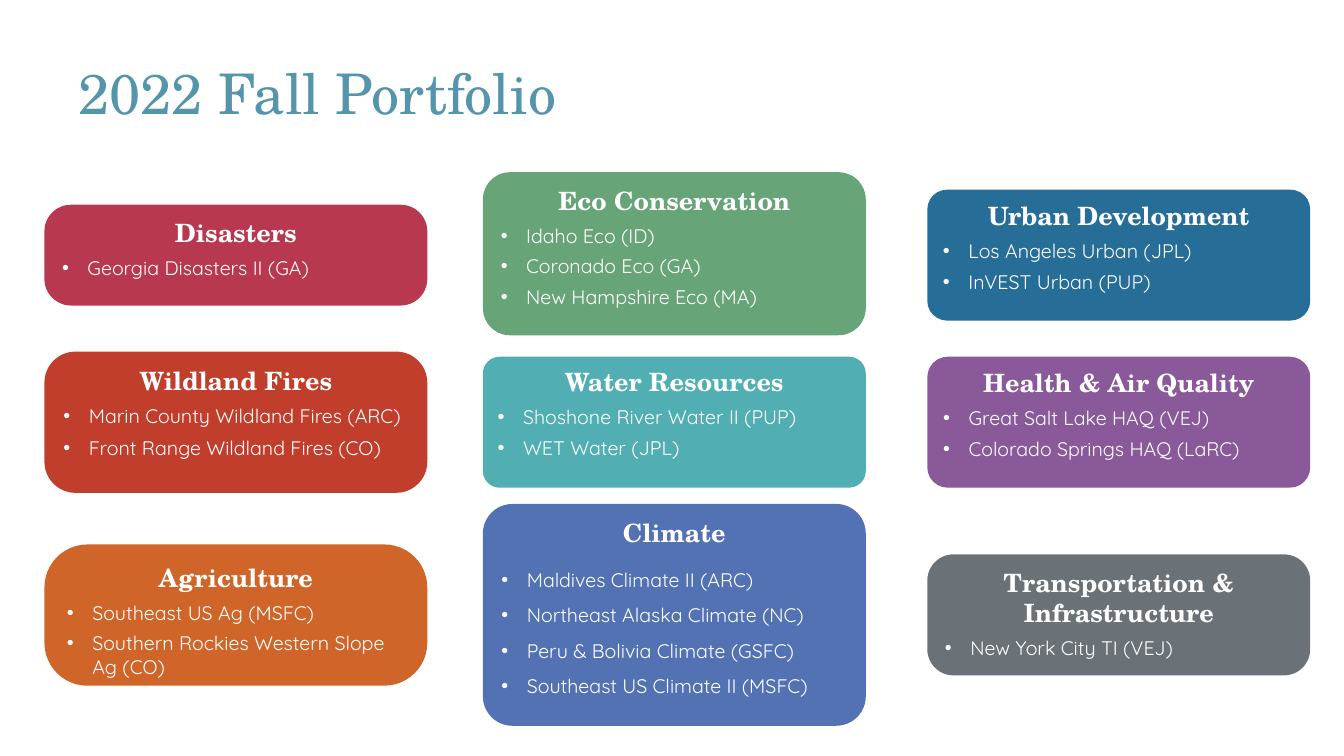
from lxml import etree
from pptx import Presentation
from pptx import util as u
from pptx.dml import color
from pptx.enum import shapes, text
from pptx.oxml import ns

HEADING_FONT = "TeX Gyre Schola"
PROJECT_FONT = "Quicksand"
WHITE = "FFFFFF"
CARD_WIDTH = 9.65
COLUMNS = [
    (1.12, [
        ("Disasters", "B8394F", 5.16, 2.54, 0.264, 5, 1,
         ["Georgia Disasters II (GA)"]),
        ("Wildland Fires", "C13D2C", 8.86, 3.56, 0.22, 6, 1,
         ["Marin County Wildland Fires (ARC)", "Front Range Wildland Fires (CO)"]),
        ("Agriculture", "D0652A", 13.72, 3.56, 0.304, 5, 1,
         ["Southeast US Ag (MSFC)", "Southern Rockies Western Slope Ag (CO)"]),
    ]),
    (12.17, [
        ("Eco Conservation", "67A478", 4.34, 4.11, 0.167, 5, 1,
         ["Idaho Eco (ID)", "Coronado Eco (GA)", "New Hampshire Eco (MA)"]),
        ("Water Resources", "51AEB3", 8.99, 3.3, 0.127, 5, 1,
         ["Shoshone River Water II (PUP)", "WET Water (JPL)"]),
        ("Climate", "5272B3", 12.7, 5.59, 0.133, 0, 1.5,
         ["Maldives Climate II (ARC)", "Northeast Alaska Climate (NC)",
          "Peru & Bolivia Climate (GSFC)", "Southeast US Climate II (MSFC)"]),
    ]),
    (23.37, [
        ("Urban Development", "266E98", 4.78, 3.3, 0.151, 5, 1,
         ["Los Angeles Urban (JPL)", "InVEST Urban (PUP)"]),
        ("Health & Air Quality", "895999", 8.99, 3.3, 0.156, 5, 1,
         ["Great Salt Lake HAQ (VEJ)", "Colorado Springs HAQ (LaRC)"]),
        ("Transportation & Infrastructure", "6A7278", 13.97, 3.05, 0.217, 5, 1,
         ["New York City TI (VEJ)"]),
    ]),
]


def rgb(value):
    """Turn a hex string into a colour."""
    return color.RGBColor.from_string(value)


def add_run(paragraph, words, font_name, size, hex_color, bold=False):
    """Add one styled run to a paragraph."""
    run = paragraph.add_run()
    run.text = words
    run.font.name = font_name
    run.font.size = u.Pt(size)
    run.font.bold = bold
    run.font.color.rgb = rgb(hex_color)


def add_bullet(paragraph):
    """Give a paragraph a white bullet with a hanging indent."""
    properties = paragraph._p.get_or_add_pPr()
    properties.set("marL", str(u.Cm(0.64)))
    properties.set("indent", str(u.Cm(-0.64)))
    bullet_color = etree.SubElement(properties, ns.qn("a:buClr"))
    etree.SubElement(bullet_color, ns.qn("a:srgbClr"), val=WHITE)
    etree.SubElement(properties, ns.qn("a:buFont"), typeface="Arial")
    etree.SubElement(properties, ns.qn("a:buChar"), char="•")


def add_title(slide, words):
    """Add the slide title."""
    title = slide.shapes.add_textbox(u.Cm(1.73), u.Cm(0.48), u.Cm(29.74), u.Cm(3.66))
    frame = title.text_frame
    frame.word_wrap = True
    frame.vertical_anchor = text.MSO_ANCHOR.MIDDLE
    add_run(frame.paragraphs[0], words, HEADING_FONT, 40, "5595AC")


def add_card(slide, left, theme, fill, top, height, rounding, gap, spacing, projects):
    """Add a rounded card with a theme heading and its projects."""
    card = slide.shapes.add_shape(
        shapes.MSO_SHAPE.ROUNDED_RECTANGLE,
        u.Cm(left), u.Cm(top), u.Cm(CARD_WIDTH), u.Cm(height))
    card.adjustments[0] = rounding
    card.shadow.inherit = False
    card.fill.solid()
    card.fill.fore_color.rgb = rgb(fill)
    card.line.fill.background()
    frame = card.text_frame
    frame.word_wrap = True
    frame.vertical_anchor = text.MSO_ANCHOR.TOP
    heading = frame.paragraphs[0]
    heading.alignment = text.PP_ALIGN.CENTER
    heading.space_after = u.Pt(6)
    add_run(heading, theme, HEADING_FONT, 18, WHITE, bold=True)
    for project in projects:
        item = frame.add_paragraph()
        item.alignment = text.PP_ALIGN.LEFT
        item.line_spacing = float(spacing)
        item.space_after = u.Pt(gap)
        add_bullet(item)
        add_run(item, project, PROJECT_FONT, 14, WHITE)


def main():
    """Build the portfolio slide."""
    deck = Presentation()
    deck.slide_width = u.Cm(33.87)
    deck.slide_height = u.Cm(19.05)
    slide = deck.slides.add_slide(deck.slide_layouts[6])
    add_title(slide, "2022 Fall Portfolio")
    for left, cards in COLUMNS:
        for card in cards:
            add_card(slide, left, *card)
    deck.save("out.pptx")


if __name__ == "__main__":
    main()
